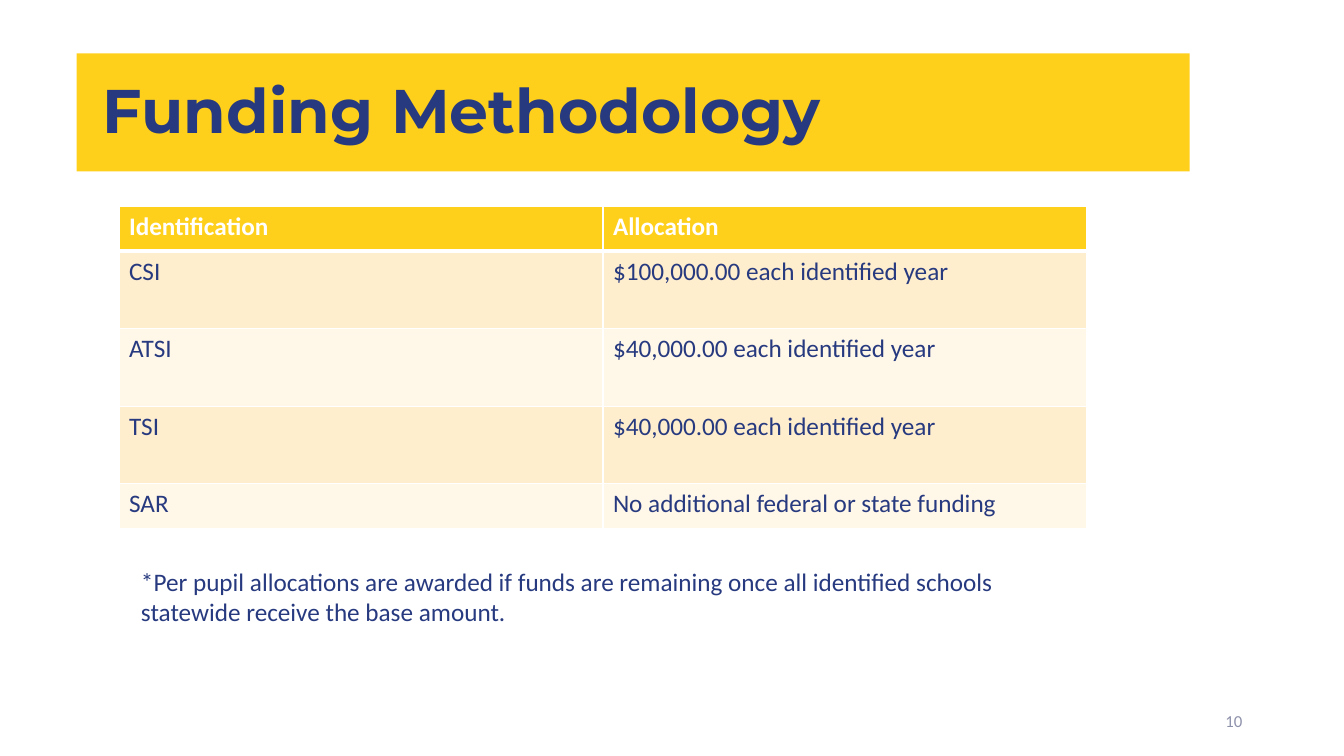
from dataclasses import dataclass

from lxml.etree import SubElement
from pptx import Presentation
from pptx.dml.color import RGBColor
from pptx.enum.shapes import MSO_SHAPE
from pptx.enum.text import MSO_ANCHOR, PP_ALIGN
from pptx.oxml.ns import qn
from pptx.util import Inches, Pt


@dataclass(frozen=True)
class Theme:
    """Hold the colours, fonts and type sizes of the slide."""
    gold: str = "FFD01B"
    navy: str = "273A7F"
    white: str = "FFFFFF"
    grey: str = "8E91AB"
    bands: tuple = ("FFEECD", "FFF7E8")
    head: str = "Montserrat"
    text: str = "Calibri"
    large: int = 44
    mid: int = 18
    small: int = 12


THEME = Theme()
ROWS = [
    ("Identification", "Allocation"),
    ("CSI", "$100,000.00 each identified year"),
    ("ATSI", "$40,000.00 each identified year"),
    ("TSI", "$40,000.00 each identified year"),
    ("SAR", "No additional federal or state funding"),
]
HEIGHTS = (0.44, 0.77, 0.77, 0.77, 0.45)
NOTE = ("*Per pupil allocations are awarded if funds are remaining once all "
        "identified schools statewide receive the base amount.")


def style(frame, color, size, font=THEME.text, bold=False):
    """Format every run of a text frame."""
    for para in frame.paragraphs:
        for run in para.runs:
            run.font.name = font
            run.font.size = Pt(size)
            run.font.bold = bold
            run.font.color.rgb = RGBColor.from_string(color)


def banner(slide, left, top, width, height):
    """Place the gold bar and the title over it."""
    bar = slide.shapes.add_shape(MSO_SHAPE.RECTANGLE, Inches(left), Inches(top),
                                 Inches(width), Inches(height))
    bar.shadow.inherit = False
    bar.fill.solid()
    bar.fill.fore_color.rgb = RGBColor.from_string(THEME.gold)
    bar.line.fill.background()
    title = slide.shapes.title
    title._element.addprevious(bar._element)
    title.left, title.top = Inches(left + 0.16), Inches(top - 0.13)
    title.width, title.height = Inches(width - 0.13), Inches(height + 0.28)
    frame = title.text_frame
    frame.text = "Funding Methodology"
    frame.vertical_anchor = MSO_ANCHOR.MIDDLE
    frame.paragraphs[0].alignment = PP_ALIGN.LEFT
    frame.paragraphs[0].line_spacing = 0.9
    style(frame, THEME.navy, THEME.large, THEME.head, True)


def border(cell, row):
    """Draw white cell borders, thick below the header row."""
    props = cell._tc.get_or_add_tcPr()
    widths = {"L": 1, "R": 1, "T": 3 if row == 1 else 1, "B": 3 if row == 0 else 1}
    for side, width in widths.items():
        line = SubElement(props, qn(f"a:ln{side}"), w=str(Pt(width)))
        fill = SubElement(line, qn("a:solidFill"))
        SubElement(fill, qn("a:srgbClr"), val=THEME.white)


def grid(slide, left, top, width):
    """Place the allocation table."""
    table = slide.shapes.add_table(len(ROWS), 2, Inches(left), Inches(top),
                                   Inches(width), Inches(sum(HEIGHTS))).table
    for col in table.columns:
        col.width = Inches(width / 2)
    for row, (texts, height) in enumerate(zip(ROWS, HEIGHTS)):
        table.rows[row].height = Inches(height)
        for col, text in enumerate(texts):
            cell = table.cell(row, col)
            border(cell, row)
            cell.fill.solid()
            shade = THEME.bands[(row - 1) % 2] if row else THEME.gold
            cell.fill.fore_color.rgb = RGBColor.from_string(shade)
            cell.text_frame.text = text
            style(cell.text_frame, THEME.navy if row else THEME.white,
                  THEME.mid, bold=row == 0)


def label(slide, text, left, top, width, height, color, size):
    """Place a wrapped text box and return its frame."""
    box = slide.shapes.add_textbox(Inches(left), Inches(top),
                                   Inches(width), Inches(height))
    frame = box.text_frame
    frame.word_wrap = True
    frame.text = text
    style(frame, color, size)
    return frame


def number(slide, left, top, width, height):
    """Place the page number at the right of its box."""
    frame = label(slide, "10", left, top, width, height, THEME.grey, THEME.small)
    frame.vertical_anchor = MSO_ANCHOR.MIDDLE
    frame.paragraphs[0].alignment = PP_ALIGN.RIGHT


def main():
    """Build and save the slide."""
    deck = Presentation()
    deck.slide_width, deck.slide_height = Inches(13.33), Inches(7.5)
    slide = deck.slides.add_slide(deck.slide_layouts[5])
    banner(slide, 0.76, 0.53, 11.04, 1.17)
    number(slide, 9.42, 6.95, 3, 0.4)
    grid(slide, 1.18, 2.05, 9.6)
    label(slide, NOTE, 1.3, 5.57, 9.49, 0.71, THEME.navy, THEME.mid)
    deck.save("out.pptx")


if __name__ == "__main__":
    main()
